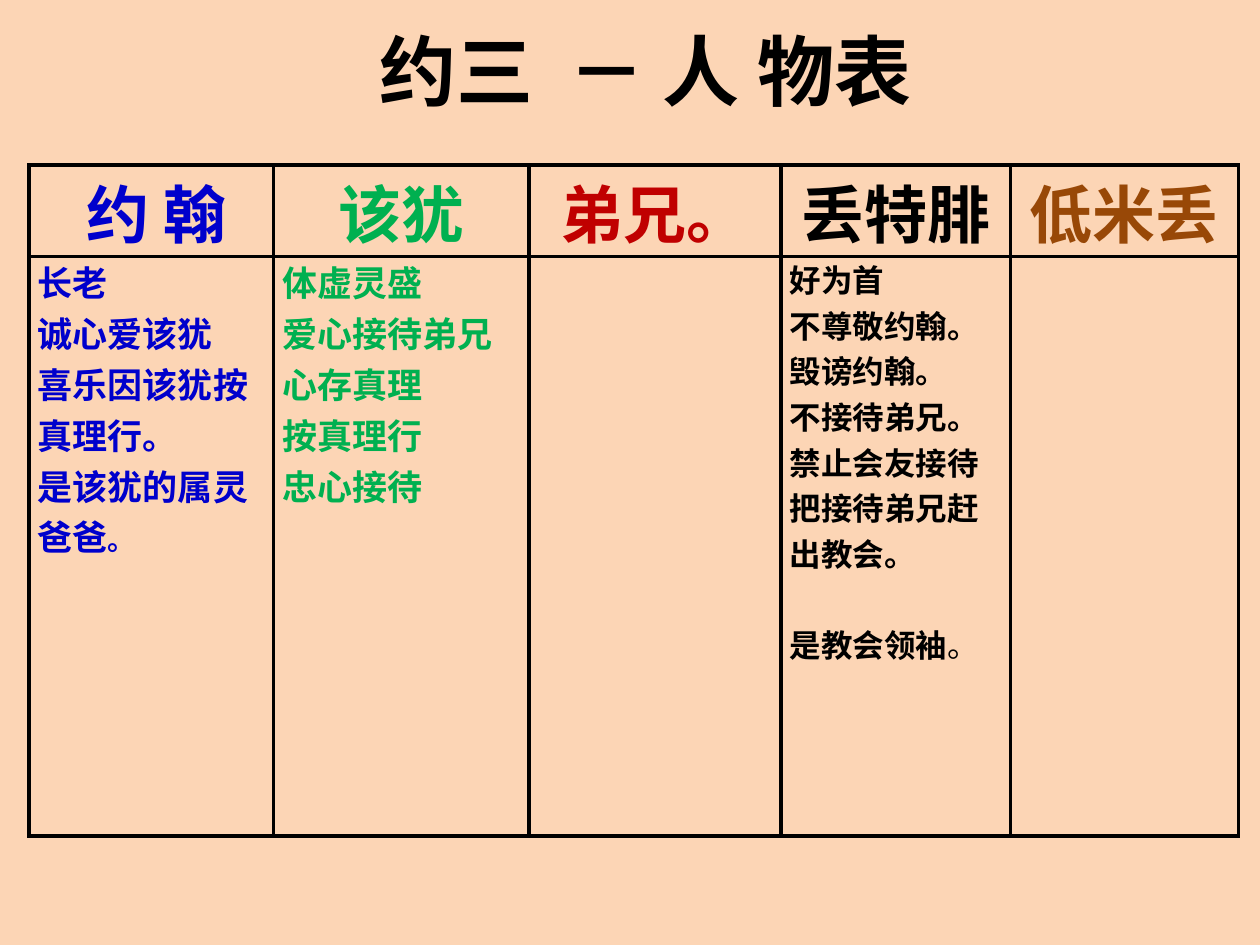
from lxml import etree
from pptx import Presentation
from pptx.dml.color import RGBColor
from pptx.enum.text import MSO_ANCHOR, MSO_AUTO_SIZE, PP_ALIGN
from pptx.oxml.ns import qn
from pptx.util import Inches, Pt

CENTER, LEFT = PP_ALIGN.CENTER, PP_ALIGN.LEFT
MIDDLE = MSO_ANCHOR.MIDDLE
GROW = MSO_AUTO_SIZE.SHAPE_TO_FIT_TEXT
SANS, SERIF = "Noto Sans CJK SC", "Times New Roman"
COLORS = {"page": "FCD5B5", "line": "000000", "blue": "0000CC", "green": "00B050",
          "red": "C00000", "black": "000000", "brown": "984807"}
WIDTH, HEIGHT = Inches(10), Inches(7.5)


def add_span(para, text, size, color, font=SANS, bold=True):
    span = para.add_run()
    span.text = text
    span.font.size = Pt(size)
    span.font.bold = bold
    span.font.name = font
    span.font.color.rgb = RGBColor.from_string(COLORS[color])
    east_asian = etree.SubElement(span.font._element, qn("a:ea"))
    east_asian.set("typeface", SANS)


def add_borders(cell):
    properties = cell._tc.get_or_add_tcPr()
    for index, side in enumerate(("lnL", "lnR", "lnT", "lnB")):
        line = etree.Element(qn("a:" + side), w=str(Pt(2.25)))
        fill = etree.SubElement(line, qn("a:solidFill"))
        etree.SubElement(fill, qn("a:srgbClr"), val=COLORS["line"])
        properties.insert(index, line)


deck = Presentation()
deck.slide_width, deck.slide_height = WIDTH, HEIGHT
page = deck.slides.add_slide(deck.slide_layouts[6])
page.background.fill.solid()
page.background.fill.fore_color.rgb = RGBColor.from_string(COLORS["page"])

people = [
    ("约 翰", "blue", 20, ["长老", "诚心爱该犹", "喜乐因该犹按真理行。", "是该犹的属灵爸爸"]),
    ("该犹", "green", 20, ["体虚灵盛", "爱心接待弟兄", "心存真理", "按真理行", "忠心接待"]),
    ("弟兄。", "red", 18, []),
    ("丢特腓", "black", 18, ["好为首", "不尊敬约翰。", "毁谤约翰。", "不接待弟兄。",
                          "禁止会友接待", "把接待弟兄赶出教会。", "是教会领袖"]),
    ("低米丢", "brown", 18, []),
]
column_widths = [1.94, 2.03, 2, 1.82, 1.81]
row_heights = [0.61, 4.6]

frame = page.shapes.add_table(len(row_heights), len(people), Inches(0.23), Inches(1.31),
                              Inches(sum(column_widths)), Inches(sum(row_heights)))
table = frame.table
table.first_row = table.horz_banding = False
for column, width in zip(table.columns, column_widths):
    column.width = Inches(width)
for row, height in zip(table.rows, row_heights):
    row.height = Inches(height)

for cell in table.iter_cells():
    cell.margin_left = cell.margin_right = Inches(0.07)
    cell.margin_top = cell.margin_bottom = 0
    cell.fill.background()
    add_borders(cell)

for index, (name, color, size, traits) in enumerate(people):
    para = table.cell(0, index).text_frame.paragraphs[0]
    para.alignment = CENTER
    if index == 0:
        add_span(para, " ", 28, color)
    add_span(para, name, 36, color)

    body = table.cell(1, index).text_frame
    for number, trait in enumerate(traits):
        para = body.add_paragraph() if number else body.paragraphs[0]
        para.alignment = LEFT
        add_span(para, trait, size, color)
    if name == "约 翰":
        add_span(para, "。", 16, color, font=SERIF)
    if name == "丢特腓":
        para.space_before = Pt(26)
        add_span(para, "。", size, color, font=SERIF, bold=False)

box = page.shapes.add_textbox(Inches(2.5), Inches(0.13), Inches(5.25), Inches(0.84))
title = box.text_frame
title.word_wrap = True
title.auto_size = GROW
title.vertical_anchor = MIDDLE
para = title.paragraphs[0]
para.alignment = CENTER
add_span(para, "约三  － 人 物表", 44, "black")

deck.save("out.pptx")
